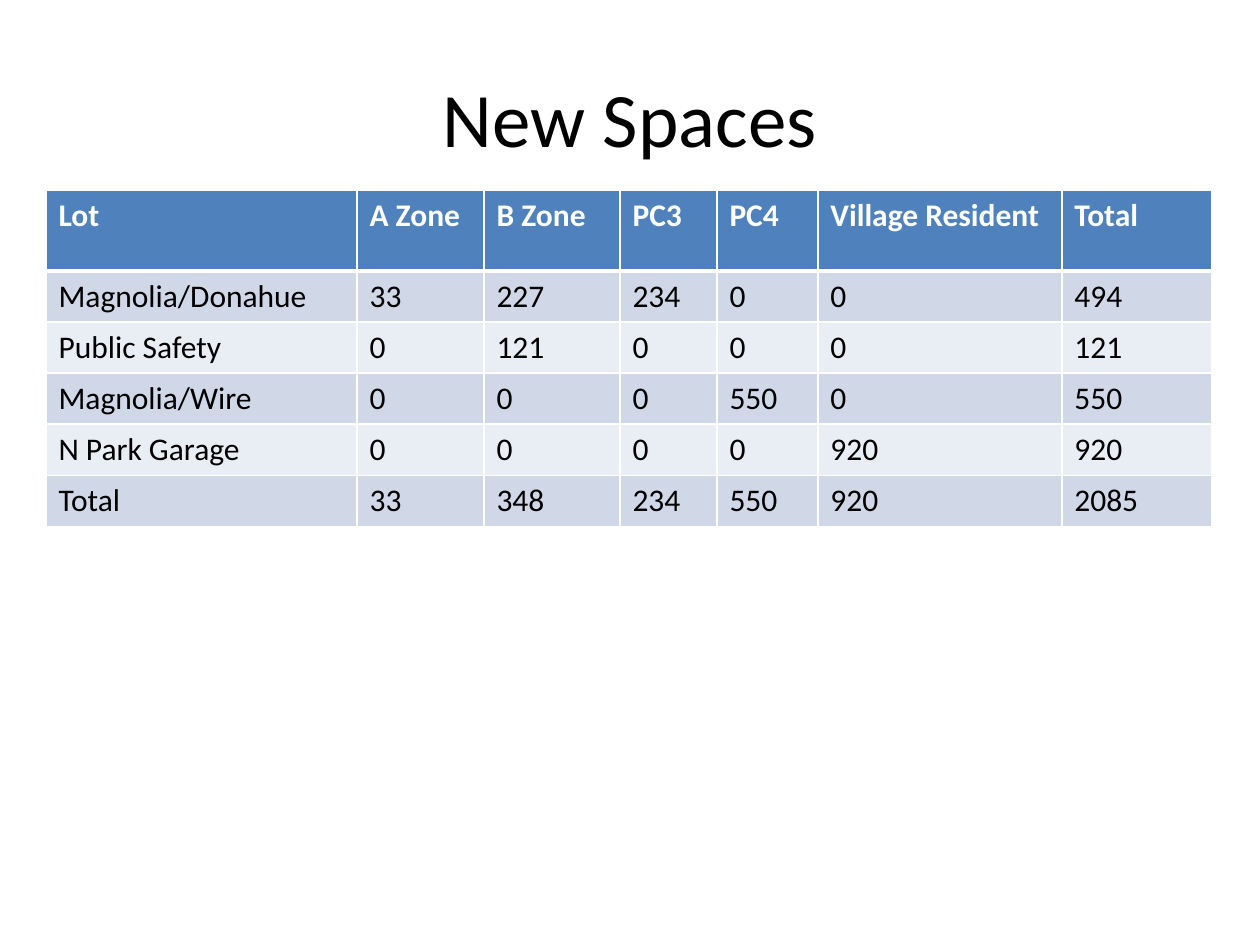
from dataclasses import dataclass

from lxml import etree
from pptx import Presentation
from pptx import util as u
from pptx.dml.color import RGBColor
from pptx.enum import text
from pptx.oxml.ns import qn

SCALE = 914400 // 126
WHITE, BLACK = "FFFFFF", "000000"


@dataclass
class Row:
    cells: list[str]
    fill: str
    high: int = 51
    ink: str = BLACK
    bold: bool = False
    rule: int = 1


HEAD = ["Lot", "A Zone", "B Zone", "PC3", "PC4", "Village Resident", "Total"]
LOTS = [
    ["Magnolia/Donahue", 33, 227, 234, 0, 0, 494],
    ["Public Safety", 0, 121, 0, 0, 0, 121],
    ["Magnolia/Wire", 0, 0, 0, 550, 0, 550],
    ["N Park Garage", 0, 0, 0, 0, 920, 920],
    ["Total", 33, 348, 234, 550, 920, 2085],
]
COLS = [311, 127, 136, 97, 101, 244, 150]
BANDS = ["D0D8E8", "E9EDF4"]


def px(n: int) -> int:
    return u.Emu(n * SCALE)


def paint(color, code: str) -> None:
    color.rgb = RGBColor.from_string(code)


def write(frame, words: str, size: int, ink: str = BLACK,
          bold: bool = False, align=text.PP_ALIGN.LEFT) -> None:
    para = frame.paragraphs[0]
    para.alignment = align
    run = para.add_run()
    run.text = words
    run.font.name = "Calibri"
    run.font.size = u.Pt(size)
    run.font.bold = bold
    paint(run.font.color, ink)


def edge(cell, side: str, width: int) -> None:
    """Draw one white border; call before the cell is filled."""
    line = etree.SubElement(cell._tc.get_or_add_tcPr(), qn(f"a:ln{side}"),
                            w=str(u.Pt(width)))
    fill = etree.SubElement(line, qn("a:solidFill"))
    etree.SubElement(fill, qn("a:srgbClr"), val=WHITE)


def draw_row(table, i: int, row: Row, top: int) -> None:
    table.rows[i].height = px(row.high)
    for j, words in enumerate(row.cells):
        cell = table.cell(i, j)
        for side, width in zip("LRTB", (1, 1, top, row.rule)):
            edge(cell, side, width)
        cell.fill.solid()
        paint(cell.fill.fore_color, row.fill)
        write(cell.text_frame, words, 18, row.ink, row.bold)


def draw_table(slide, rows: list[Row], left: int, top: int) -> None:
    high = sum(row.high for row in rows)
    table = slide.shapes.add_table(len(rows), len(COLS), px(left), px(top),
                                   px(sum(COLS)), px(high)).table
    for col, wide in zip(table.columns, COLS):
        col.width = px(wide)
    rule = 1
    for i, row in enumerate(rows):
        draw_row(table, i, row, rule)
        rule = row.rule


def draw_title(slide, words: str) -> None:
    title = slide.shapes.title
    title.left, title.top, title.width, title.height = map(
        px, (63, 38, 1134, 158))
    title.text_frame.vertical_anchor = text.MSO_ANCHOR.MIDDLE
    write(title.text_frame, words, 44, align=text.PP_ALIGN.CENTER)


def main() -> None:
    deck = Presentation()
    deck.slide_width, deck.slide_height = px(1260), px(945)
    slide = deck.slides.add_slide(deck.slide_layouts[5])
    draw_title(slide, "New Spaces")
    rows = [Row(HEAD, "4F81BD", 81, WHITE, True, 3)]
    rows += [Row([str(item) for item in lot], BANDS[i % 2])
             for i, lot in enumerate(LOTS)]
    draw_table(slide, rows, 46, 190)
    deck.save("out.pptx")


if __name__ == "__main__":
    main()
